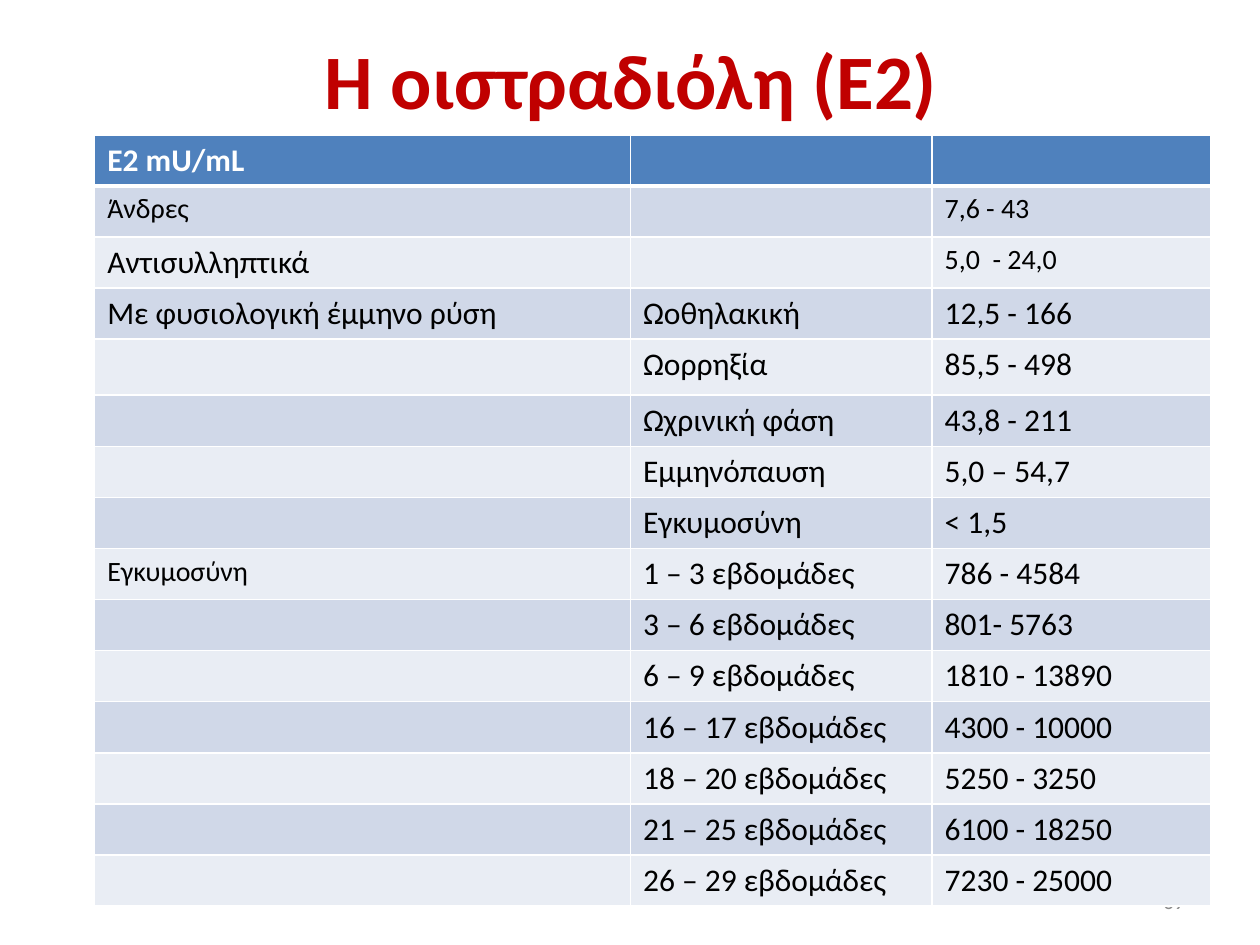
import pptx
import pptx.dml.color
import pptx.enum.text
import pptx.oxml
import pptx.oxml.ns
import pptx.util
from lxml import etree

Cm = pptx.util.Cm
Pt = pptx.util.Pt
RGBColor = pptx.dml.color.RGBColor
Align = pptx.enum.text.PP_ALIGN

# Content
TITLE = "H οιστραδιόλη (Ε2)"
SLIDE_NUMBER = "69"
ROWS = [
    ("Ε2 mU/mL", "", ""),
    ("Άνδρες", "", "7,6 - 43"),
    ("Αντισυλληπτικά", "", "5,0  - 24,0"),
    ("Με φυσιολογική έμμηνο ρύση", "Ωοθηλακική", "12,5 - 166"),
    ("", "Ωορρηξία", "85,5 - 498"),
    ("", "Ωχρινική φάση", "43,8 - 211"),
    ("", "Εμμηνόπαυση", "5,0 – 54,7"),
    ("", "Εγκυμοσύνη", "< 1,5"),
    ("Εγκυμοσύνη", "1 – 3 εβδομάδες", "786 - 4584"),
    ("", "3 – 6 εβδομάδες", "801- 5763"),
    ("", "6 – 9 εβδομάδες", "1810 - 13890"),
    ("", "16 – 17 εβδομάδες", "4300 - 10000"),
    ("", "18 – 20 εβδομάδες", "5250 - 3250"),
    ("", "21 – 25 εβδομάδες", "6100 - 18250"),
    ("", "26 – 29 εβδομάδες", "7230 - 25000"),
]
SMALL_CELLS = {(1, 0), (1, 2), (2, 2), (8, 0)}

# Style
FONT = "Calibri"
RED = RGBColor(0xC0, 0x00, 0x00)
GREY = RGBColor(0x8C, 0x8C, 0x8C)
BLACK = RGBColor(0x00, 0x00, 0x00)
WHITE = RGBColor(0xFF, 0xFF, 0xFF)
HEADER_BLUE = RGBColor(0x4F, 0x81, 0xBD)
BANDS = (RGBColor(0xE9, 0xED, 0xF4), RGBColor(0xD0, 0xD8, 0xE8))

# Table measures in centimetres
COLUMN_WIDTHS = (10.8, 6.08, 5.62)
ROW_HEIGHT = 1.03
TALL_ROWS = {0: 1.0, 4: 1.13}


def style_font(paragraph, size, color, bold=False):
    font = paragraph.font
    font.name, font.size, font.bold = FONT, Pt(size), bold
    font.color.rgb = color


def add_label(slide, text, box, alignment, size, color, bold=False):
    frame = slide.shapes.add_textbox(*map(Cm, box)).text_frame
    frame.word_wrap = True
    frame.vertical_anchor = pptx.enum.text.MSO_ANCHOR.MIDDLE
    paragraph = frame.paragraphs[0]
    paragraph.text = text
    paragraph.alignment = alignment
    style_font(paragraph, size, color, bold)


def set_borders(cell, bottom_width):
    properties = cell._tc.get_or_add_tcPr()
    widths = {"a:lnL": 1, "a:lnR": 1, "a:lnT": 1, "a:lnB": bottom_width}
    for position, (tag, width) in enumerate(widths.items()):
        line = etree.Element(pptx.oxml.ns.qn(tag), w=str(Pt(width)))
        fill = etree.SubElement(line, pptx.oxml.ns.qn("a:solidFill"))
        etree.SubElement(fill, pptx.oxml.ns.qn("a:srgbClr"), val=str(WHITE))
        properties.insert(position, line)


def add_hormone_table(slide):
    heights = [TALL_ROWS.get(i, ROW_HEIGHT) for i in range(len(ROWS))]
    table = slide.shapes.add_table(
        len(ROWS), len(COLUMN_WIDTHS), Cm(1.91), Cm(2.73),
        Cm(sum(COLUMN_WIDTHS)), Cm(sum(heights))).table
    for column, width in zip(table.columns, COLUMN_WIDTHS):
        column.width = Cm(width)
    for i, texts in enumerate(ROWS):
        table.rows[i].height = Cm(heights[i])
        header = i == 0
        for j, text in enumerate(texts):
            cell = table.cell(i, j)
            cell.text = text
            cell.fill.solid()
            cell.fill.fore_color.rgb = HEADER_BLUE if header else BANDS[i % 2]
            set_borders(cell, 3 if header else 1)
            style_font(cell.text_frame.paragraphs[0],
                       16 if (i, j) in SMALL_CELLS else 18,
                       WHITE if header else BLACK, header)


def main():
    presentation = pptx.Presentation()
    presentation.slide_width, presentation.slide_height = Cm(25.4), Cm(19.05)
    slide = presentation.slides.add_slide(presentation.slide_layouts[6])

    # Title and slide number, then the table in front
    add_label(slide, TITLE, (1.3, 0, 22.86, 3.18), Align.CENTER, 44, RED, True)
    add_label(slide, SLIDE_NUMBER, (18.2, 17.66, 5.93, 1.01), Align.RIGHT, 12, GREY)
    add_hormone_table(slide)

    presentation.save("out.pptx")


if __name__ == "__main__":
    main()
